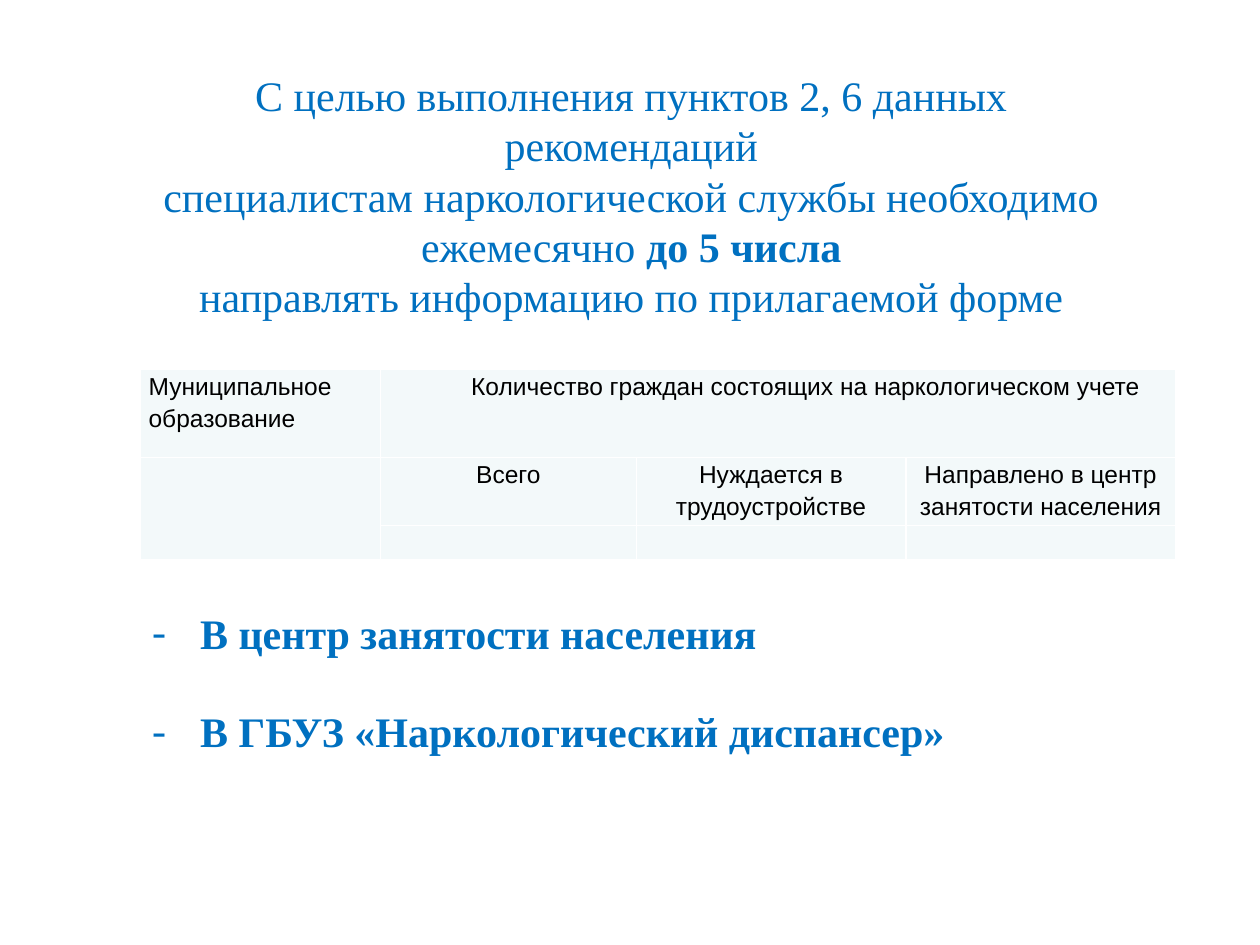
from dataclasses import dataclass, field
from typing import Any

from lxml.etree import SubElement
from pptx import Presentation
from pptx.dml.color import RGBColor as Color
from pptx.enum.text import MSO_ANCHOR as Anchor, PP_ALIGN as Align
from pptx.oxml.ns import qn
from pptx.util import Inches, Pt


@dataclass(frozen=True)
class Theme:
    heading_font: str = "Times New Roman"
    table_font: str = "Arial"
    heading_size: int = 24
    table_size: int = 14
    accent: str = "0070C0"
    ink: str = "000000"
    cell_fill: str = "F3F9FA"
    border: str = "FFFFFF"


@dataclass(frozen=True)
class Span:
    text: str
    bold: bool = False


@dataclass(frozen=True)
class Line:
    spans: list[Span]
    layout: dict[str, Any] = field(default_factory=dict)
    indent: tuple[float, float] = (0, 0)
    bullet: str = ""


@dataclass(frozen=True)
class CellSpec:
    row: int
    column: int
    lines: list[Line] = field(default_factory=list)
    row_span: int = 1
    column_span: int = 1


THEME = Theme()
HEADING = {"name": THEME.heading_font, "size": Pt(THEME.heading_size)}
TABLE = {"name": THEME.table_font, "size": Pt(THEME.table_size)}
CENTER = {"alignment": Align.CENTER}
SPACED = {"line_spacing": 1.15}
CENTER_SPACED = CENTER | SPACED

TITLE = [
    Line([Span("С целью выполнения пунктов 2, 6 данных рекомендаций")], CENTER),
    Line([Span("специалистам наркологической службы необходимо")], CENTER),
    Line([Span("ежемесячно "), Span("до 5 числа", True)], CENTER),
    Line([Span("направлять информацию по прилагаемой форме")], CENTER),
]
RECIPIENTS = [
    Line([Span("В центр занятости населения", True)], {}, (0.38, -0.38), "-"),
    Line([Span("В ГБУЗ «Наркологический диспансер»", True)],
         {"space_before": Pt(27.6)}, (0.38, -0.38), "-"),
]
COLUMNS = [1.91, 2.03, 2.14, 2.14]
ROWS = [0.7, 0.54, 0.27]
CELLS = [
    CellSpec(0, 0, [Line([Span("Муниципальное")], SPACED),
                    Line([Span("образование")], SPACED)]),
    CellSpec(0, 1, [Line([Span("Количество граждан состоящих на наркологическом учете")],
                         SPACED, (0, 0.65))], column_span=3),
    CellSpec(1, 0, row_span=2),
    CellSpec(1, 1, [Line([Span("Всего")], CENTER_SPACED, (0.15, -0.15))]),
    CellSpec(1, 2, [Line([Span("Нуждается в трудоустройстве")], CENTER_SPACED)]),
    CellSpec(1, 3, [Line([Span("Направлено в центр занятости населения")], CENTER_SPACED)]),
]


def apply(target: Any, values: dict[str, Any]) -> None:
    for name, value in values.items():
        setattr(target, name, value)


def write_lines(frame: Any, lines: list[Line], font: dict[str, Any], color: str) -> None:
    for index, line in enumerate(lines):
        para = frame.add_paragraph() if index else frame.paragraphs[0]
        apply(para, line.layout)
        properties = para._p.get_or_add_pPr()
        for name, length in zip(("marL", "indent"), line.indent):
            properties.set(name, str(Inches(length)))
        if line.bullet:
            SubElement(properties, qn("a:buFont"), typeface=font["name"])
            SubElement(properties, qn("a:buChar"), char=line.bullet)
        for span in line.spans:
            run = para.add_run()
            run.text = span.text
            apply(run.font, font | {"bold": span.bold})
            run.font.color.rgb = Color.from_string(color)


def add_text(page: Any, top: float, height: float, lines: list[Line]) -> None:
    box = page.shapes.add_textbox(Inches(1.11), Inches(top), Inches(7.8), Inches(height))
    box.text_frame.word_wrap = True
    write_lines(box.text_frame, lines, HEADING, THEME.accent)


def style_cell(cell: Any) -> None:
    apply(cell, {"margin_left": Inches(0.07), "margin_right": Inches(0.07),
                 "margin_top": 0, "margin_bottom": 0, "vertical_anchor": Anchor.TOP})
    properties = cell._tc.get_or_add_tcPr()
    for side in ("lnL", "lnR", "lnT", "lnB"):
        edge = SubElement(properties, qn(f"a:{side}"), w=str(Pt(1)))
        fill = SubElement(edge, qn("a:solidFill"))
        SubElement(fill, qn("a:srgbClr"), val=THEME.border)
    cell.fill.solid()
    cell.fill.fore_color.rgb = Color.from_string(THEME.cell_fill)


def add_form(page: Any) -> None:
    frame = page.shapes.add_table(len(ROWS), len(COLUMNS), Inches(1.11), Inches(2.93),
                                  Inches(sum(COLUMNS)), Inches(sum(ROWS)))
    table = frame.table
    apply(table, {"first_row": False, "horz_banding": False})
    for column, width in zip(table.columns, COLUMNS):
        column.width = Inches(width)
    for row, height in zip(table.rows, ROWS):
        row.height = Inches(height)
    for cell in table.iter_cells():
        style_cell(cell)
    for spec in CELLS:
        cell = table.cell(spec.row, spec.column)
        if spec.row_span > 1 or spec.column_span > 1:
            cell.merge(table.cell(spec.row + spec.row_span - 1,
                                  spec.column + spec.column_span - 1))
        write_lines(cell.text_frame, spec.lines, TABLE, THEME.ink)
    for cell in table.iter_cells():
        if not cell.text:
            SubElement(cell.text_frame.paragraphs[0]._p, qn("a:endParaRPr"),
                       sz=str(THEME.table_size * 100))


def main() -> None:
    deck = Presentation()
    apply(deck, {"slide_width": Inches(10), "slide_height": Inches(7.5)})
    page = deck.slides.add_slide(deck.slide_layouts[6])
    add_text(page, 0.5, 2.42, TITLE)
    add_form(page)
    add_text(page, 4.77, 1.72, RECIPIENTS)
    deck.save("out.pptx")


if __name__ == "__main__":
    main()
